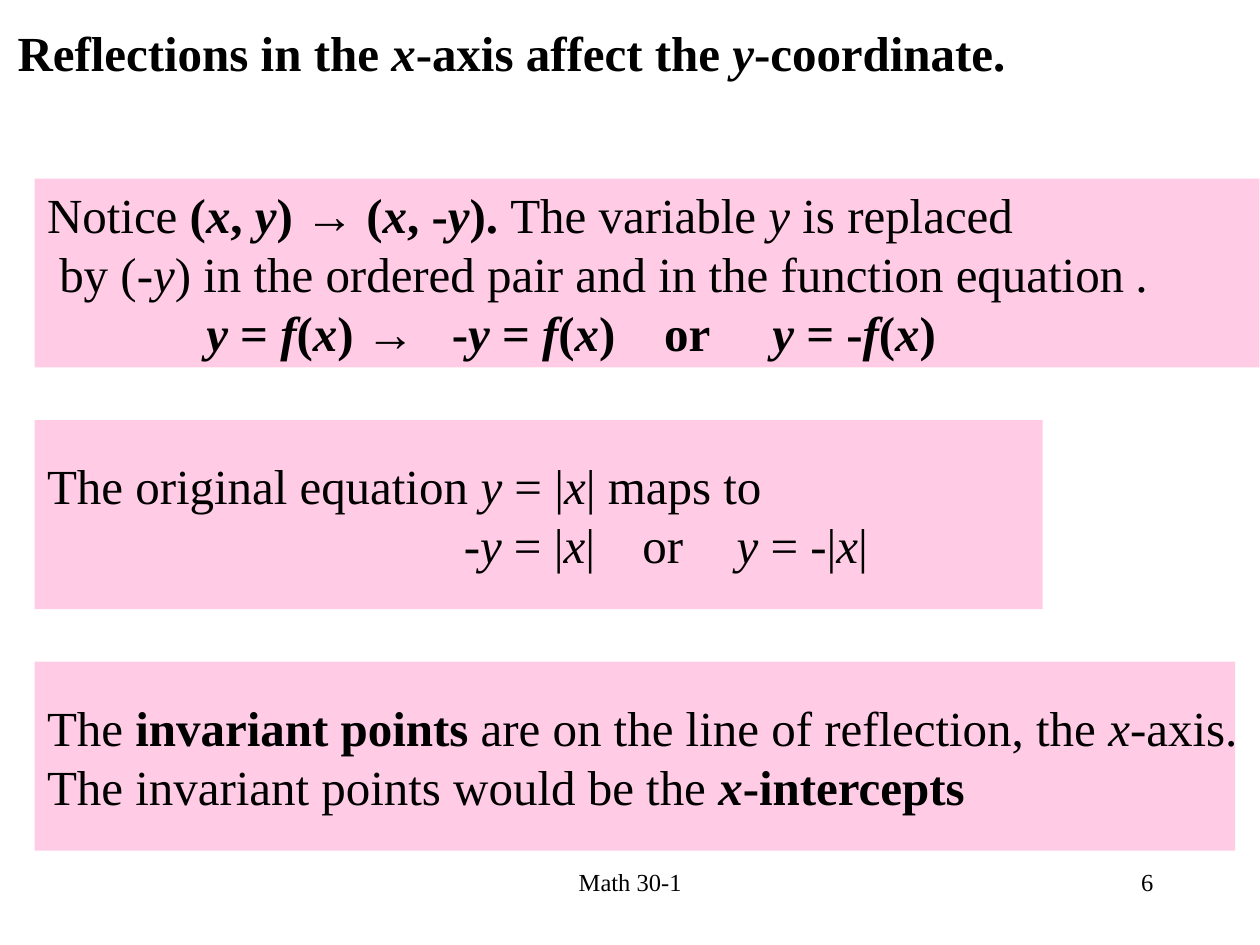
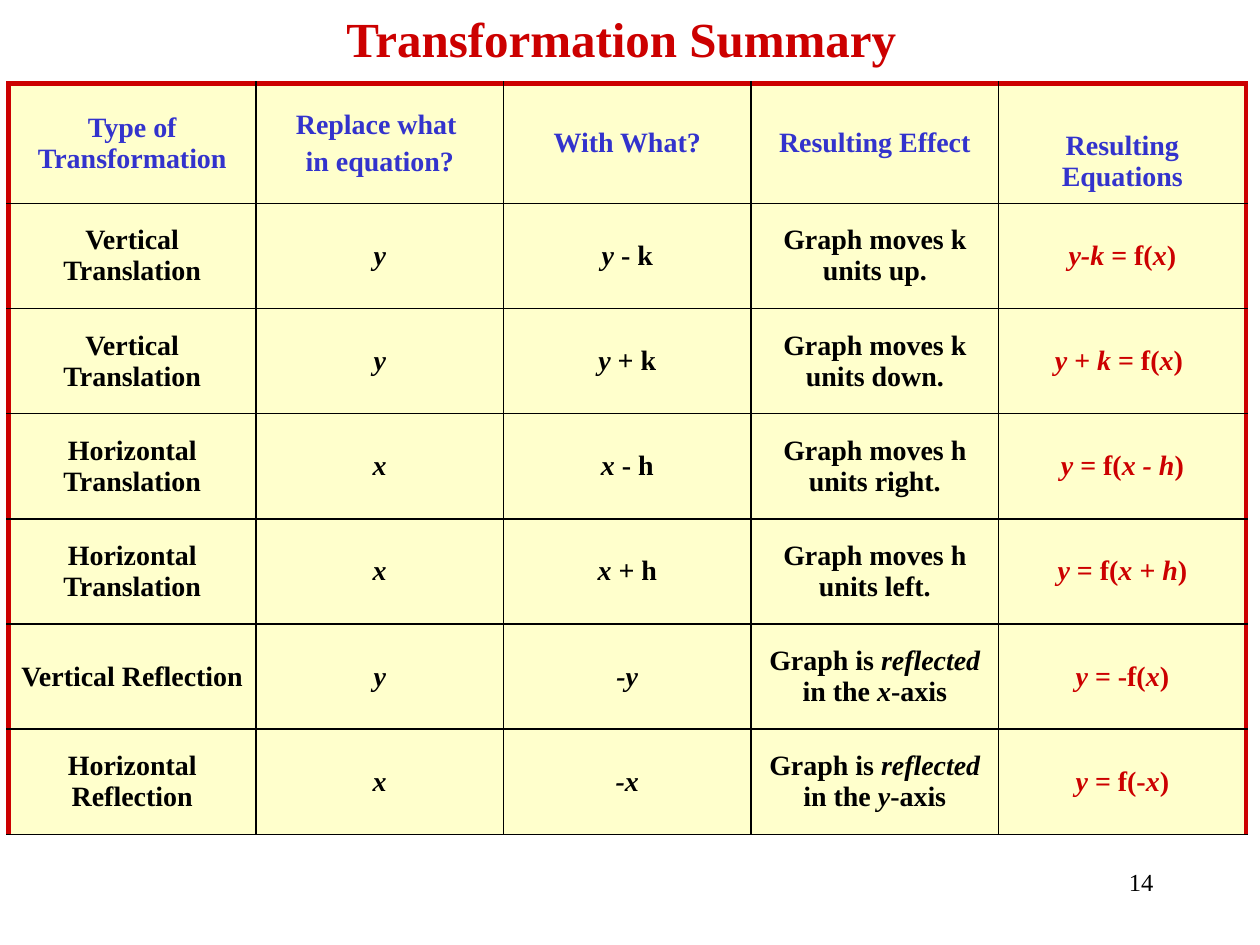
"""Build two slides: reflections in the x-axis and a transformation summary table."""
from lxml.etree import SubElement
from pptx import Presentation
from pptx.dml.color import RGBColor
from pptx.enum.shapes import MSO_SHAPE
from pptx.enum.text import MSO_ANCHOR, MSO_AUTO_SIZE, PP_ALIGN
from pptx.oxml.ns import qn
from pptx.util import Cm, Pt

BLACK = RGBColor(0x00, 0x00, 0x00)
RED = RGBColor(0xCC, 0x00, 0x00)
BLUE = RGBColor(0x33, 0x33, 0xCC)
PINK = RGBColor(0xFF, 0x99, 0xCC)
CREAM = RGBColor(0xFF, 0xFF, 0xCC)
FONT = "Times New Roman"


def write(frame, text, size=28, color=BLACK, bold=False, align=PP_ALIGN.LEFT,
          anchor=MSO_ANCHOR.TOP, wrap=True, before=0, tabs=()):
    """Fill a frame line by line; *stars* switch bold and _underscores_ set italic."""
    frame.word_wrap = wrap
    frame.vertical_anchor = anchor
    for number, line in enumerate(text.split("\n")):
        para = frame.add_paragraph() if number else frame.paragraphs[0]
        para.alignment = align
        para.space_before = Pt(before)
        if "\t" in line:
            stops = SubElement(para._p.get_or_add_pPr(), qn("a:tabLst"))
            for stop in tabs:
                SubElement(stops, qn("a:tab"), pos=str(Cm(stop)), algn="l")
        for i, part in enumerate(line.split("*")):
            for j, piece in enumerate(part.split("_")):
                if piece:
                    span = para.add_run()
                    span.text = piece
                    span.font.name = FONT
                    span.font.size = Pt(size)
                    span.font.color.rgb = color
                    span.font.bold = bold != (i % 2 == 1)
                    span.font.italic = j % 2 == 1


def start_page(deck, title, number, left, top, width, color):
    """Add a page with its title and page number."""
    page = deck.slides.add_slide(deck.slide_layouts[5])
    heading = page.shapes.title
    heading.left, heading.top = Cm(left), Cm(top)
    heading.width, heading.height = Cm(width), Cm(1.45)
    heading.text_frame.auto_size = MSO_AUTO_SIZE.NONE
    write(heading.text_frame, title, color=color, bold=True, wrap=False)
    box = page.shapes.add_textbox(Cm(18.2), Cm(17.35), Cm(5.3), Cm(1.27))
    write(box.text_frame, number, size=14, align=PP_ALIGN.RIGHT)
    return page


deck = Presentation()
deck.slide_width, deck.slide_height = Cm(25.4), Cm(19.05)

page = start_page(deck, "Reflections in the _x_-axis affect the _y_-coordinate.",
                  "6", 0.1, 0.33, 20.65, BLACK)
panels = [
    (24.69, (3.21, 8.16, 12.44, 14.62),
     "Notice *(_x_, _y_) → (_x_, -_y_). *The variable _y_ is replaced\n"
     " by (_-y_) in the ordered pair and in the function equation _._\n"
     "*\t_y _= _f_(_x_) →\t-_y_ = _f_(_x_)\tor\t_y _= -_f_(_x_)*"),
    (20.32, (8.4, 12, 13.9),
     "The original equation _y _= |_x_| maps to\n"
     "\t-_y _= |_x_|\tor\t_y _= -|_x_|"),
    (24.2, (),
     "The *invariant points *are on the line of reflection, the _x_-axis.\n"
     "The invariant points would be the *_x_-intercepts*"),
]
for row, (width, tabs, text) in enumerate(panels):
    panel = page.shapes.add_shape(MSO_SHAPE.RECTANGLE, Cm(0.7), Cm(3.6 + row * 4.87),
                                  Cm(width), Cm(3.81))
    panel.shadow.inherit = False
    panel.line.fill.background()
    panel.fill.solid()
    panel.fill.fore_color.rgb = PINK
    pink = panel._element.spPr.find(".//" + qn("a:srgbClr"))
    SubElement(pink, qn("a:alpha"), val="50000")
    write(panel.text_frame, text, anchor=MSO_ANCHOR.MIDDLE, wrap=False, tabs=tabs)
footer = page.shapes.add_textbox(Cm(8.68), Cm(17.35), Cm(8.05), Cm(1.27))
write(footer.text_frame, "Math 30-1", size=14, align=PP_ALIGN.CENTER)

page = start_page(deck, "Transformation Summary", "14", 6.73, 0.05, 11.68, RED)
rows = [
    ("Type of Transformation", "Replace what \nin equation?", "With What?",
     "Resulting Effect", "Resulting Equations"),
    ("Vertical Translation", "_y_", "_y_ - k", "Graph moves k units up.",
     "_y-k _= f(_x_)"),
    ("Vertical Translation", "_y_", "_y_ + k", "Graph moves k units down.",
     "_y + k _= f(_x_) "),
    ("Horizontal Translation", "_x_", "_x_ - h", "Graph moves h units right.",
     "_y _= f(_x - h_)"),
    ("Horizontal Translation", "_x_", "_x_ + h", "Graph moves h units left.",
     "_y _= f(_x + h_)"),
    ("Vertical Reflection", "_y_", "_-y_", "Graph is_ reflected _in the _x_-axis",
     "_y _= -f(_x_)"),
    ("Horizontal Reflection", "_x_", "_-x_", "Graph is_ reflected _in the _y_-axis",
     "_y _= f(-_x_)"),
]
last = len(rows[0]) - 1
table = page.shapes.add_table(len(rows), last + 1, Cm(0.17), Cm(1.68),
                              Cm(24.95), Cm(15.14)).table
table.first_row = table.horz_banding = False
for column in table.columns:
    column.width = Cm(4.99)
for r, texts in enumerate(rows):
    table.rows[r].height = Cm(2.12 if r else 2.42)
    for c, text in enumerate(texts):
        cell = table.cell(r, c)
        color = BLUE if r == 0 else RED if c == last else BLACK
        write(cell.text_frame, text, size=16, color=color, bold=True,
              align=PP_ALIGN.CENTER, before=3.2)
        cell.vertical_anchor = MSO_ANCHOR.MIDDLE
        borders = cell._tc.get_or_add_tcPr()
        for side, outer in (("L", c == 0), ("R", c == last), ("T", r == 0), ("B", False)):
            line = SubElement(borders, qn("a:ln" + side), w=str(Pt(3 if outer else 1)))
            paint = SubElement(line, qn("a:solidFill"))
            SubElement(paint, qn("a:srgbClr"), val=str(RED if outer else BLACK))
        cell.fill.solid()
        cell.fill.fore_color.rgb = CREAM
table.cell(0, last).margin_top = Cm(0.87)

deck.save("out.pptx")
